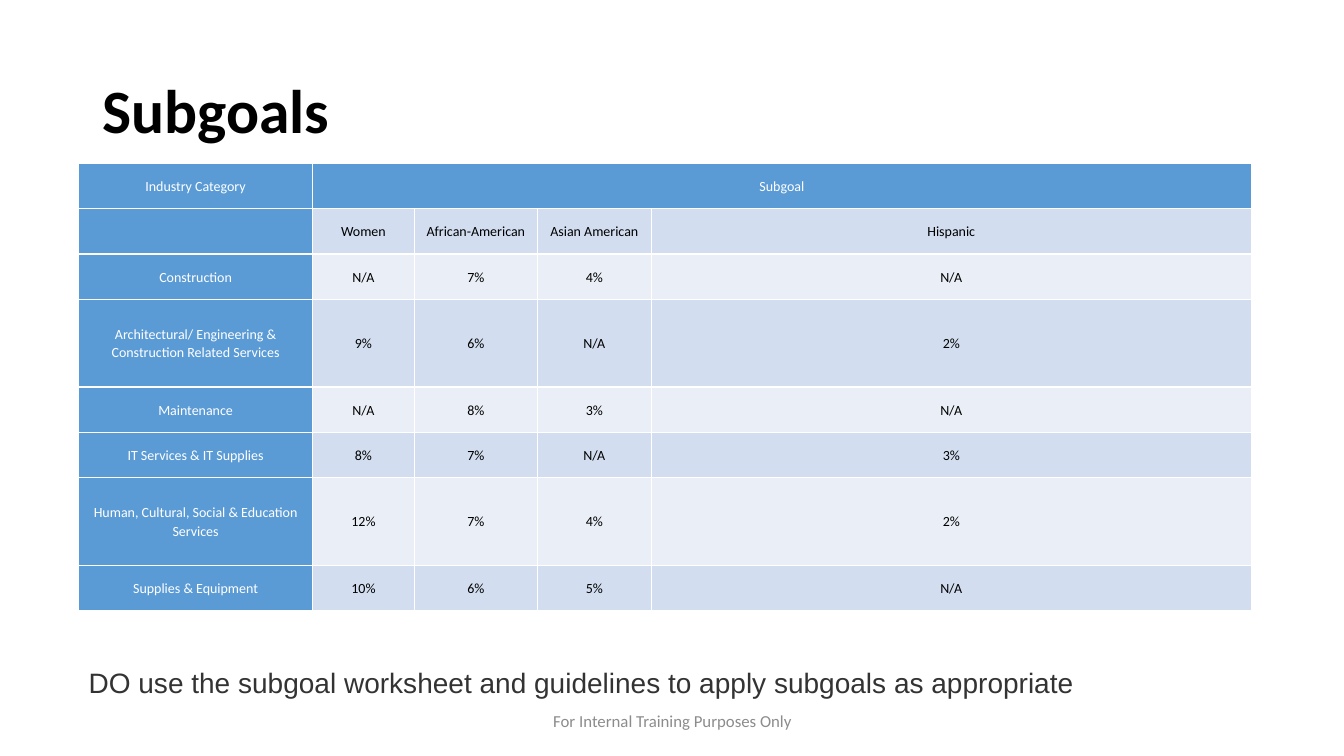
from lxml.etree import SubElement as Sub
from pptx import Presentation
from pptx.dml.color import RGBColor as RGB
from pptx.enum.text import MSO_ANCHOR as Anchor, PP_ALIGN as Align
from pptx.oxml.ns import qn
from pptx.util import Inches, Pt

BLACK = RGB(0x00, 0x00, 0x00)
WHITE = RGB(0xFF, 0xFF, 0xFF)
BLUE = RGB(0x5B, 0x9B, 0xD5)
MID = RGB(0xD2, 0xDE, 0xEF)
PALE = RGB(0xEA, 0xEF, 0xF7)
GREY = RGB(0x8C, 0x8C, 0x8C)
DARK = RGB(0x33, 0x33, 0x33)

COLS = [17.4, 7.58, 9.15, 8.48, 44.64]
LOW, TALL = 6, 11.6
GOALS = [
    ["Industry Category", "Subgoal", "", "", ""],
    ["", "Women", "African-American", "Asian American", "Hispanic"],
    ["Construction", "N/A", "7%", "4%", "N/A"],
    ["Architectural/ Engineering & Construction Related Services",
     "9%", "6%", "N/A", "2%"],
    ["Maintenance", "N/A", "8%", "3%", "N/A"],
    ["IT Services & IT Supplies", "8%", "7%", "N/A", "3%"],
    ["Human, Cultural, Social & Education Services",
     "12%", "7%", "4%", "2%"],
    ["Supplies & Equipment", "10%", "6%", "5%", "N/A"],
]


class Deck:
    """One slide on a grid of 100 columns by 100 rows."""

    def __init__(self):
        self.prs = Presentation()
        self.prs.slide_width = Inches(13.33)
        self.prs.slide_height = Inches(7.5)
        self.slide = self.prs.slides.add_slide(self.prs.slide_layouts[6])
        self.font = "Calibri"

    def x(self, cols):
        return round(self.prs.slide_width * cols / 100)

    def y(self, rows):
        return round(self.prs.slide_height * rows / 100)

    def style(self, para, size, color, bold=False, font=None):
        for run in para.runs:
            run.font.name = font or self.font
            run.font.size = Pt(size)
            run.font.bold = bold
            run.font.color.rgb = color

    def text(self, words, left, top, width, height, size, color,
             align=Align.LEFT, space=1.0, bold=False, font=None):
        box = self.slide.shapes.add_textbox(
            self.x(left), self.y(top), self.x(width), self.y(height))
        frame = box.text_frame
        frame.word_wrap = True
        frame.vertical_anchor = Anchor.MIDDLE
        frame.text = words
        para = frame.paragraphs[0]
        para.alignment = align
        para.line_spacing = space
        self.style(para, size, color, bold, font)

    def edge(self, cell):
        """Draw a thin white line on all four sides of a cell."""
        props = cell._tc.get_or_add_tcPr()
        for spot, side in enumerate(("lnL", "lnR", "lnT", "lnB")):
            line = Sub(props, qn(f"a:{side}"), w=str(Pt(1)))
            fill = Sub(line, qn("a:solidFill"))
            Sub(fill, qn("a:srgbClr"), val=str(WHITE))
            props.insert(spot, line)

    def cell(self, cell, words, fill, color):
        cell.fill.solid()
        cell.fill.fore_color.rgb = fill
        cell.vertical_anchor = Anchor.MIDDLE
        cell.margin_left = cell.margin_right = Inches(0.01)
        cell.margin_top = cell.margin_bottom = Inches(0.01)
        cell.text_frame.text = words
        para = cell.text_frame.paragraphs[0]
        para.alignment = Align.CENTER
        para.line_spacing = 1.07
        para.font.size = Pt(10)
        self.style(para, 10, color)
        self.edge(cell)

    def table(self, data, left, top, cols):
        """Build a table whose rows are tall where the first label is long."""
        rows = [TALL if len(row[0]) > 30 else LOW for row in data]
        grid = self.slide.shapes.add_table(
            len(rows), len(cols), self.x(left), self.y(top),
            self.x(sum(cols)), self.y(sum(rows))).table
        for col, width in zip(grid.columns, cols):
            col.width = self.x(width)
        for r, row in enumerate(data):
            grid.rows[r].height = self.y(rows[r])
            for c, words in enumerate(row):
                head = r == 0 or c == 0
                band = MID if r % 2 else PALE
                self.cell(grid.cell(r, c), words, BLUE if head else band,
                          WHITE if head else BLACK)
        grid.cell(0, 1).merge(grid.cell(0, len(cols) - 1))


def main():
    deck = Deck()
    deck.text("Subgoals", 6.9, 5.33, 86.27, 19.33, 44, BLACK,
              space=0.9, bold=True)
    deck.table(GOALS, 5.85, 21.6, COLS)
    deck.text("For Internal Training Purposes Only",
              33.16, 92.67, 33.76, 5.33, 12, GREY, align=Align.CENTER)
    deck.text("DO use the subgoal worksheet and guidelines to apply "
              "subgoals as appropriate",
              5.85, 87.33, 96.7, 5.87, 20, DARK, font="Arial")
    deck.prs.save("out.pptx")


if __name__ == "__main__":
    main()
